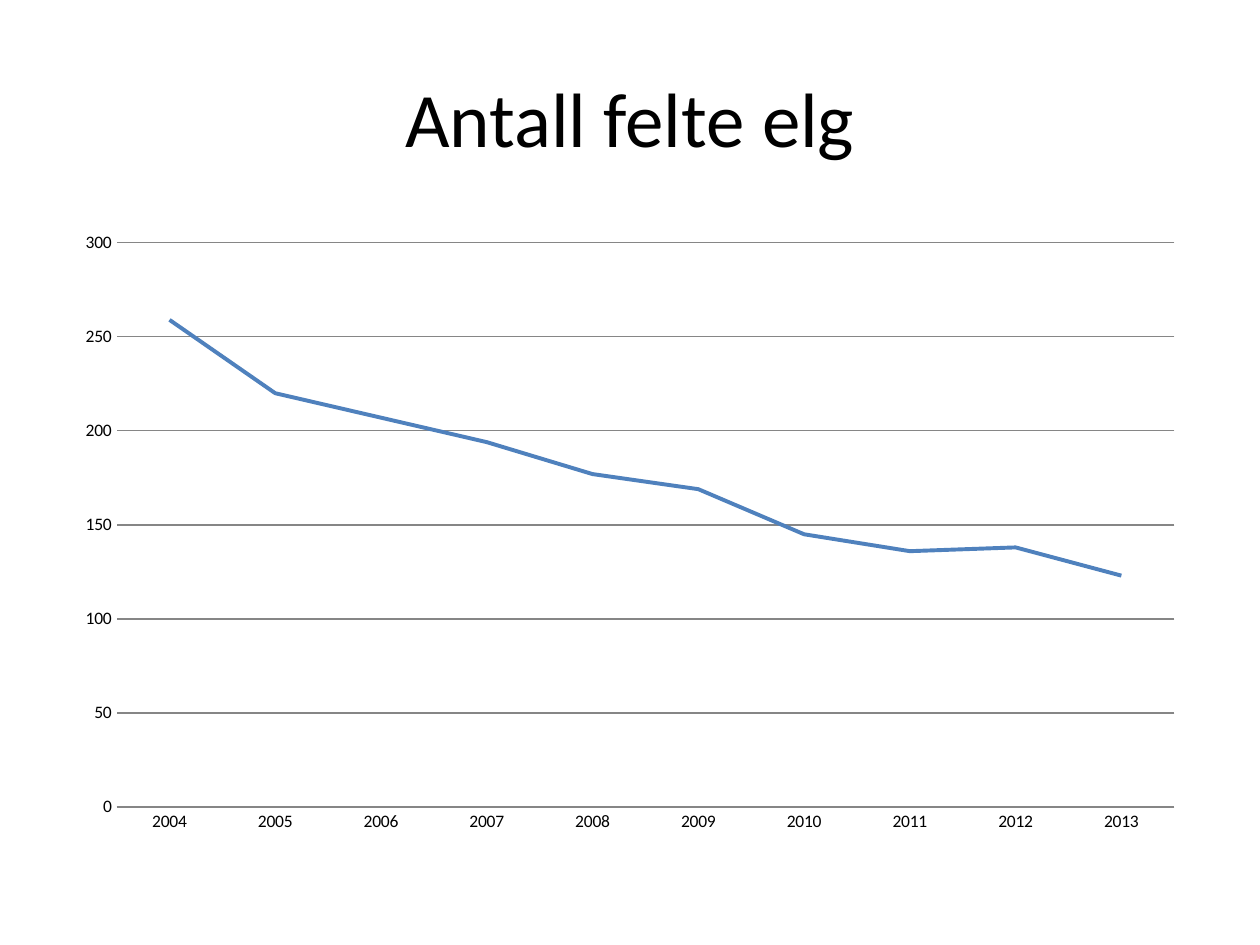
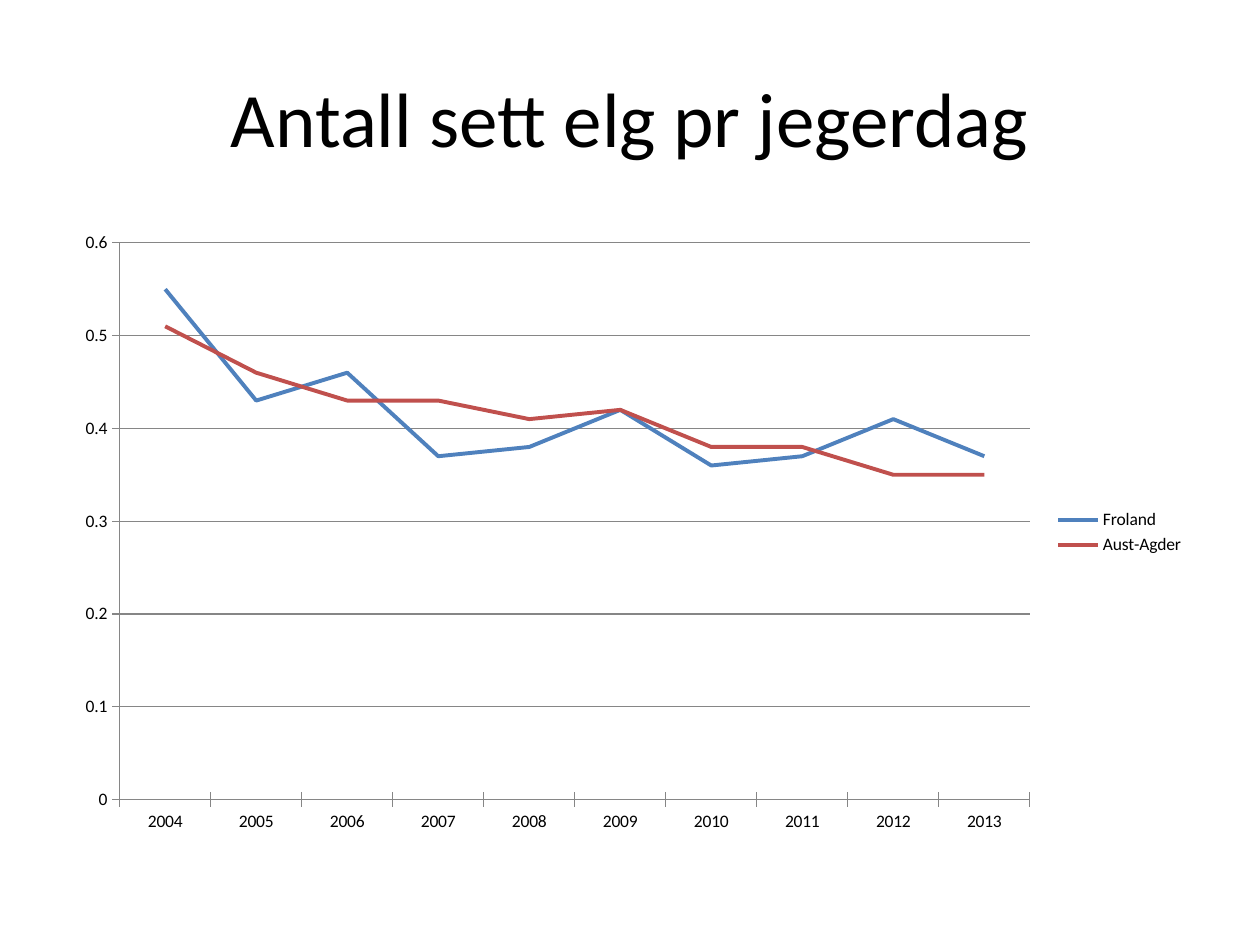
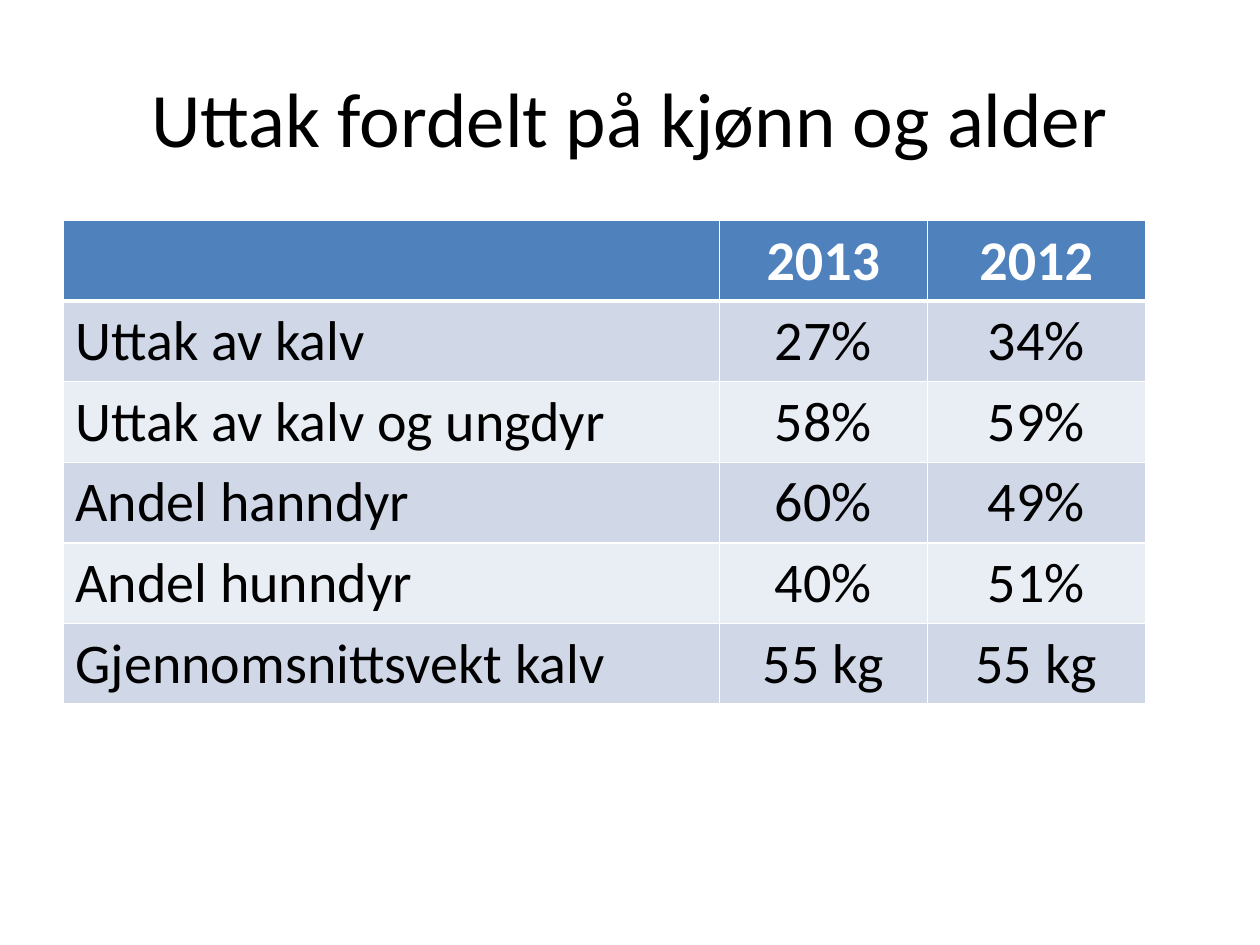
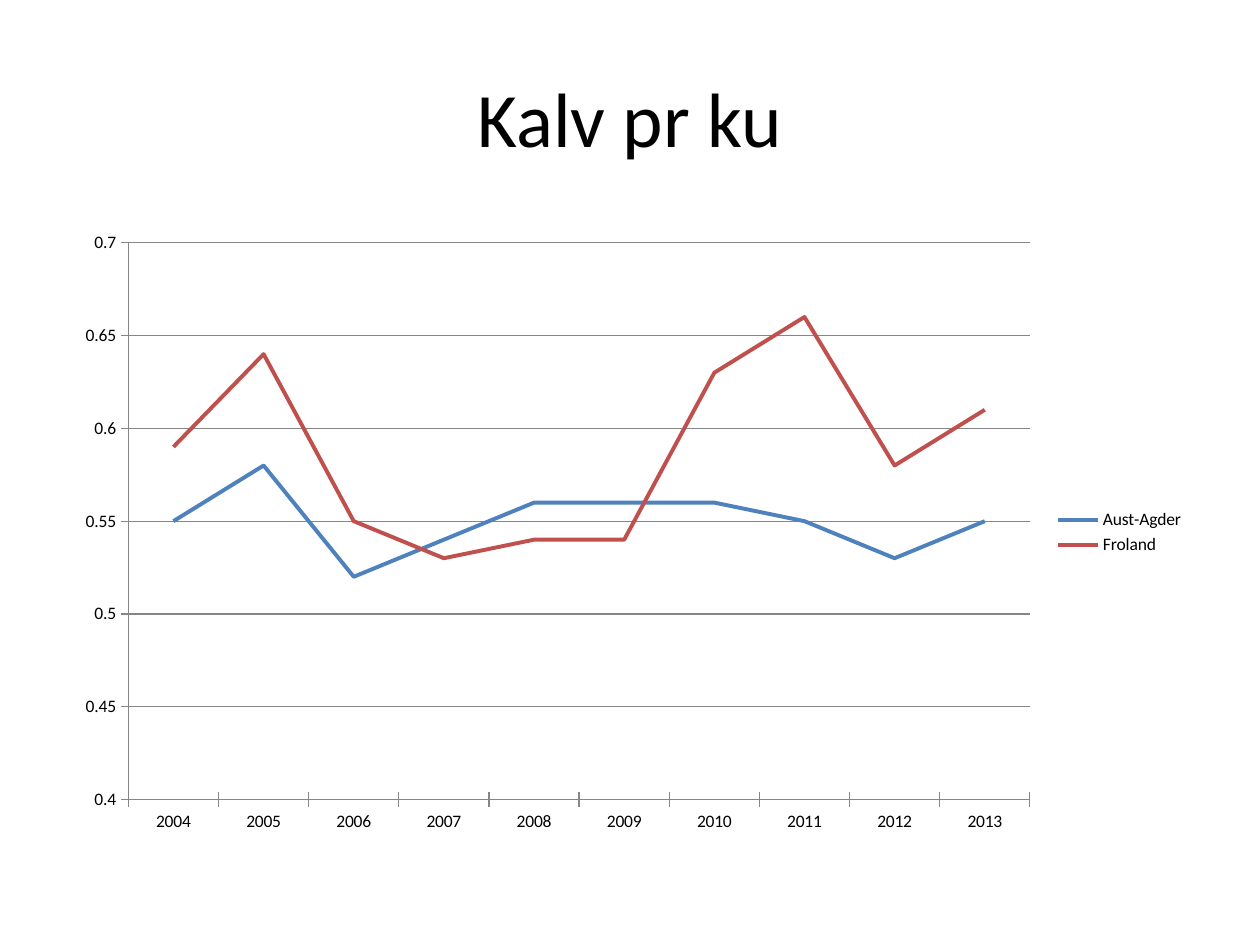
from lxml.etree import SubElement
from pptx import Presentation
from pptx.chart.data import CategoryChartData
from pptx.dml.color import RGBColor
from pptx.enum.chart import (XL_CHART_TYPE as ChartType, XL_LEGEND_POSITION as LegendPosition,
                             XL_TICK_MARK as TickMark)
from pptx.enum.text import MSO_ANCHOR as Anchor, PP_ALIGN as Align
from pptx.oxml.ns import qn
from pptx.util import Pt

PX = 9144  # 100 px to the inch
FONT = "Calibri"
BLACK = RGBColor(0x00, 0x00, 0x00)
WHITE = RGBColor(0xFF, 0xFF, 0xFF)
BLUE = RGBColor(0x4F, 0x81, 0xBD)
RED = RGBColor(0xC0, 0x50, 0x4D)
BANDS = (RGBColor(0xD0, 0xD8, 0xE8), RGBColor(0xE9, 0xED, 0xF4))
GREY = RGBColor(0x86, 0x86, 0x86)

LEFT, WIDTH = 50, 900
TITLE_TOP, TITLE_HEIGHT = 30, 125
BODY_TOP, BODY_HEIGHT = 175, 495
ROW_HEIGHT = 64
YEARS = [str(year) for year in range(2004, 2014)]


def px(*lengths):
    return [length * PX for length in lengths]


class Deck:
    def __init__(self):
        self.presentation = Presentation()
        self.presentation.slide_width, self.presentation.slide_height = px(1000, 750)
        self.slide = None

    def start_slide(self, title):
        self.slide = self.presentation.slides.add_slide(self.presentation.slide_layouts[6])
        box = self.slide.shapes.add_textbox(*px(LEFT, TITLE_TOP, WIDTH, TITLE_HEIGHT))
        frame = box.text_frame
        frame.word_wrap = True
        frame.vertical_anchor = Anchor.MIDDLE
        self.add_text(frame.paragraphs[0], title, 44, align=Align.CENTER)

    def style_font(self, font, size, color=BLACK, bold=False):
        font.name, font.size, font.bold = FONT, Pt(size), bold
        font.color.rgb = color

    def add_text(self, paragraph, text, size, color=BLACK, bold=False, align=Align.LEFT):
        paragraph.alignment = align
        run = paragraph.add_run()
        run.text = text
        self.style_font(run.font, size, color, bold)

    def line_chart(self, series, minimum=None, legend=True, tick=TickMark.CROSS, value_line=True):
        data = CategoryChartData()
        data.categories = YEARS
        for name, values in series.items():
            data.add_series(name, values)
        chart = self.slide.shapes.add_chart(
            ChartType.LINE, *px(LEFT, BODY_TOP, WIDTH, BODY_HEIGHT), data).chart
        self.style_font(chart.font, 10)
        chart.has_title = False
        chart.has_legend = legend
        if legend:
            chart.legend.position = LegendPosition.RIGHT
            chart.legend.include_in_layout = False

        value_axis = chart.value_axis
        value_axis.has_major_gridlines = True
        for axis in (chart.category_axis, value_axis):
            axis.major_tick_mark = tick
            axis.minor_tick_mark = TickMark.NONE
        for holder in (chart.category_axis, value_axis, value_axis.major_gridlines):
            holder.format.line.color.rgb = GREY
            holder.format.line.width = Pt(0.75)
        if not value_line:
            value_axis.format.line.fill.background()
        if minimum is not None:
            value_axis.minimum_scale = minimum

        plot = chart.plots[0]
        plot.vary_by_categories = False
        for line, color in zip(plot.series, (BLUE, RED)):
            line.smooth = False
            line.format.line.color.rgb = color
            line.format.line.width = Pt(2.25)

    def table(self, column_widths, rows):
        table = self.slide.shapes.add_table(
            len(rows), len(column_widths),
            *px(LEFT, BODY_TOP, sum(column_widths), ROW_HEIGHT * len(rows))).table
        table.horz_banding = False
        for column, width in zip(table.columns, px(*column_widths)):
            column.width = width
        for row_index, texts in enumerate(rows):
            header = row_index == 0
            for column_index, text in enumerate(texts):
                cell = table.cell(row_index, column_index)
                self.cell_borders(cell, top=3 if row_index == 1 else 1, bottom=3 if header else 1)
                cell.fill.solid()
                cell.fill.fore_color.rgb = BLUE if header else BANDS[(row_index - 1) % 2]
                if text:
                    self.add_text(cell.text_frame.paragraphs[0], text, 32,
                                  WHITE if header else BLACK, header,
                                  Align.CENTER if column_index else Align.LEFT)

    def cell_borders(self, cell, top, bottom):
        """Draw white borders; must run before the cell gets its fill."""
        properties = cell._tc.get_or_add_tcPr()
        for side, width in (("L", 1), ("R", 1), ("T", top), ("B", bottom)):
            line = SubElement(properties, qn(f"a:ln{side}"), w=str(Pt(width)))
            fill = SubElement(line, qn("a:solidFill"))
            SubElement(fill, qn("a:srgbClr"), val=str(WHITE))


def main():
    deck = Deck()

    deck.start_slide("Antall felte elg")
    deck.line_chart({"Series 1": [259, 220, 207, 194, 177, 169, 145, 136, 138, 123]},
                    legend=False, tick=TickMark.NONE, value_line=False)

    deck.start_slide("Antall sett elg pr jegerdag")
    deck.line_chart({
        "Froland": [0.55, 0.43, 0.46, 0.37, 0.38, 0.42, 0.36, 0.37, 0.41, 0.37],
        "Aust-Agder": [0.51, 0.46, 0.43, 0.43, 0.41, 0.42, 0.38, 0.38, 0.35, 0.35],
    })

    deck.start_slide("Uttak fordelt på kjønn og alder")
    deck.table([521, 165, 173], [
        ("", "2013", "2012"),
        ("Uttak av kalv", "27%", "34%"),
        ("Uttak av kalv og ungdyr", "58%", "59%"),
        ("Andel hanndyr", "60%", "49%"),
        ("Andel hunndyr", "40%", "51%"),
        ("Gjennomsnittsvekt kalv", "55 kg", "55 kg"),
    ])

    deck.start_slide("Kalv pr ku")
    deck.line_chart({
        "Aust-Agder": [0.55, 0.58, 0.52, 0.54, 0.56, 0.56, 0.56, 0.55, 0.53, 0.55],
        "Froland": [0.59, 0.64, 0.55, 0.53, 0.54, 0.54, 0.63, 0.66, 0.58, 0.61],
    }, minimum=0.4)

    deck.presentation.save("out.pptx")


if __name__ == "__main__":
    main()
